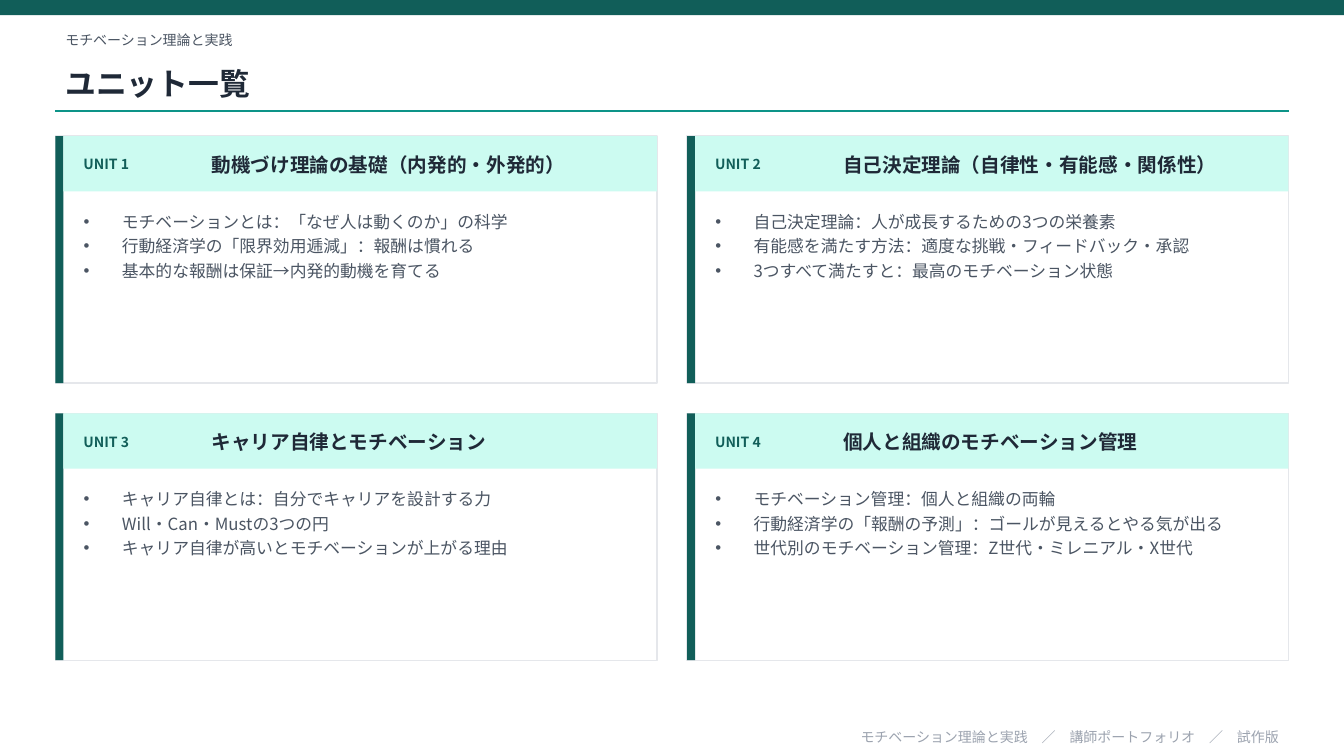
from lxml import etree
from pptx import Presentation
from pptx.dml.color import RGBColor
from pptx.enum.shapes import MSO_CONNECTOR, MSO_SHAPE
from pptx.enum.text import MSO_ANCHOR, MSO_AUTO_SIZE, PP_ALIGN
from pptx.oxml.ns import qn
from pptx.util import Inches, Pt

RECT = MSO_SHAPE.RECTANGLE
STRAIGHT = MSO_CONNECTOR.STRAIGHT
TOP, MIDDLE = MSO_ANCHOR.TOP, MSO_ANCHOR.MIDDLE
LEFT, RIGHT = PP_ALIGN.LEFT, PP_ALIGN.RIGHT
NO_FIT = MSO_AUTO_SIZE.NONE

DEEP = RGBColor(0x11, 0x5E, 0x59)
TEAL = RGBColor(0x0D, 0x94, 0x88)
MINT = RGBColor(0xCC, 0xFB, 0xF1)
WHITE = RGBColor(0xFF, 0xFF, 0xFF)
EDGE = RGBColor(0xE5, 0xE7, 0xEB)
INK = RGBColor(0x1F, 0x29, 0x37)
GRAY = RGBColor(0x4B, 0x55, 0x63)
PALE = RGBColor(0x9C, 0xA3, 0xAF)
FONT = "Noto Sans CJK JP"

# Grid in inches
WIDTH, HEIGHT = 13.333, 7.5
EDGE_X, TOP_Y = 0.55, 1.35
FULL = WIDTH - 2 * EDGE_X
COLS, GAP = 2, 0.3
CARD_W, CARD_H = (FULL - GAP * (COLS - 1)) / COLS, 2.45
BAR, HEAD, PAD = 0.08, 0.55, 0.18
INDENT = 0.38

COURSE = "モチベーション理論と実践"
UNITS = [
    ("動機づけ理論の基礎（内発的・外発的）", [
        "モチベーションとは：「なぜ人は動くのか」の科学",
        "行動経済学の「限界効用逓減」：報酬は慣れる",
        "基本的な報酬は保証→内発的動機を育てる"]),
    ("自己決定理論（自律性・有能感・関係性）", [
        "自己決定理論：人が成長するための3つの栄養素",
        "有能感を満たす方法：適度な挑戦・フィードバック・承認",
        "3つすべて満たすと：最高のモチベーション状態"]),
    ("キャリア自律とモチベーション", [
        "キャリア自律とは：自分でキャリアを設計する力",
        "Will・Can・Mustの3つの円",
        "キャリア自律が高いとモチベーションが上がる理由"]),
    ("個人と組織のモチベーション管理", [
        "モチベーション管理：個人と組織の両輪",
        "行動経済学の「報酬の予測」：ゴールが見えるとやる気が出る",
        "世代別のモチベーション管理：Z世代・ミレニアル・X世代"]),
]


def assign(target, values):
    for name, value in values.items():
        setattr(target, name, value)


def place(shape, box):
    names = ("left", "top", "width", "height")
    assign(shape, dict(zip(names, map(Inches, box))))


def add_rect(slide, box, fill, line=None):
    rect = slide.shapes.add_shape(RECT, *map(Inches, box))
    rect.shadow.inherit = False
    rect.fill.solid()
    rect.fill.fore_color.rgb = fill
    if line is None:
        rect.line.fill.background()
    else:
        rect.line.color.rgb = line
        rect.line.width = Pt(1)


def add_rule(slide, y):
    rule = slide.shapes.add_connector(
        STRAIGHT, *map(Inches, (EDGE_X, y, EDGE_X + FULL, y)))
    rule.line.color.rgb = TEAL
    rule.line.width = Pt(1)
    etree.SubElement(rule.element.spPr, qn("a:effectLst"))


def add_bullet(para):
    props = para._p.get_or_add_pPr()
    props.set("marL", str(Inches(INDENT)))
    props.set("indent", str(-Inches(INDENT)))
    etree.SubElement(props, qn("a:buChar"), char="•")


def write(shape, lines, size, color, bold=False, align=LEFT,
          anchor=MIDDLE, bullet=False):
    frame = shape.text_frame
    assign(frame, {
        "word_wrap": True, "auto_size": NO_FIT, "vertical_anchor": anchor,
        "margin_left": Inches(0.1), "margin_right": Inches(0.1),
        "margin_top": Inches(0.05), "margin_bottom": Inches(0.05)})
    for row, line in enumerate(lines):
        para = frame.add_paragraph() if row else frame.paragraphs[0]
        assign(para, {"alignment": align, "space_before": Pt(0),
                      "space_after": Pt(3 if bullet else 0)})
        if bullet:
            add_bullet(para)
        run = para.add_run()
        run.text = line
        assign(run.font, {"size": Pt(size), "bold": bold, "name": FONT})
        run.font.color.rgb = color
        etree.SubElement(run.font._element, qn("a:ea"), typeface=FONT)


def add_text(slide, box, text, size, color, **style):
    shape = slide.shapes.add_textbox(*map(Inches, box))
    write(shape, [text], size, color, **style)


def raise_holder(slide, holder, box):
    """Move a placeholder to its box, in front of all other shapes."""
    slide.shapes.element.append(holder.element)
    place(holder, box)


def add_card(slide, index, holder):
    title, points = UNITS[index]
    row, col = divmod(index, COLS)
    x = EDGE_X + col * (CARD_W + GAP)
    y = TOP_Y + row * (CARD_H + GAP)
    add_rect(slide, (x, y, CARD_W, CARD_H), WHITE, EDGE)
    add_rect(slide, (x, y, BAR, CARD_H), DEEP)
    add_rect(slide, (x + BAR, y, CARD_W - BAR, HEAD), MINT)
    add_text(slide, (x + PAD, y + 0.08, 1.2, 0.4),
             f"UNIT {index + 1}", 10, DEEP, bold=True)
    add_text(slide, (x + 1.45, y + 0.08, CARD_W - 1.6, 0.4),
             title, 14, INK, bold=True)
    raise_holder(slide, holder,
                 (x + PAD, y + 0.7, CARD_W - 2 * PAD, 1.6))
    write(holder, points, 12, GRAY, anchor=TOP, bullet=True)


def main():
    deck = Presentation()
    deck.slide_width, deck.slide_height = Inches(WIDTH), Inches(HEIGHT)
    slide = deck.slides.add_slide(deck.slide_layouts.get_by_name("Comparison"))
    title, *lists = list(slide.placeholders)

    add_rect(slide, (0, 0, WIDTH, HEIGHT * 0.02), DEEP)
    add_text(slide, (EDGE_X, 0.25, FULL, 0.3), COURSE, 10, GRAY)
    raise_holder(slide, title, (EDGE_X, 0.55, FULL, 0.55))
    write(title, ["ユニット一覧"], 22, INK, bold=True)
    add_rule(slide, 1.1)
    for index, holder in enumerate(lists):
        add_card(slide, index, holder)
    add_text(slide, (EDGE_X, 7.2, FULL, 0.22),
             f"{COURSE}　／　講師ポートフォリオ　／　試作版", 10, PALE, align=RIGHT)
    deck.save("out.pptx")


if __name__ == "__main__":
    main()
